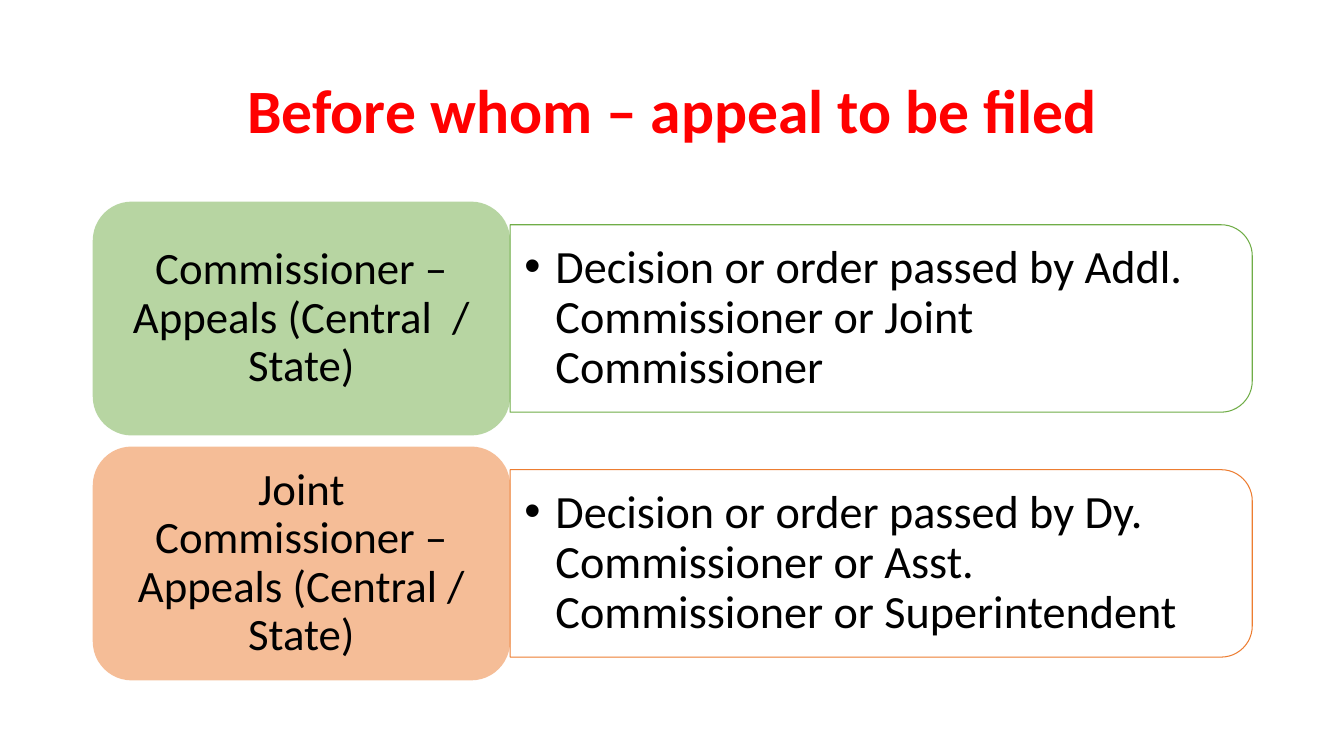
import pptx
import pptx.util
import pptx.dml.color
import pptx.enum.shapes
import pptx.enum.text
import pptx.oxml
import pptx.oxml.ns
from dataclasses import dataclass

Inches = pptx.util.Inches
Pt = pptx.util.Pt
Shape = pptx.enum.shapes.MSO_SHAPE
Align = pptx.enum.text.PP_ALIGN


@dataclass(frozen=True)
class Theme:
    font: str = "Calibri"
    title_color: str = "FF0000"
    text_color: str = "000000"
    central: str = "70AD47"
    joint: str = "ED7D31"
    title_size: int = 44
    authority_size: int = 32
    decision_size: int = 33
    outline: float = 0.75
    opacity: int = 50


def rgb(value):
    return pptx.dml.color.RGBColor.from_string(value)


def drawing_element(tag, **attributes):
    element = pptx.oxml.parse_xml(f"<a:{tag} {pptx.oxml.ns.nsdecls('a')}/>")
    for name, value in attributes.items():
        element.set(name, str(value))
    return element


class AppealSlide:
    def __init__(self, presentation, theme):
        self.theme = theme
        self.slide = presentation.slides.add_slide(presentation.slide_layouts[5])

    def set_text(self, holder, text, size, color, align, inset_x, inset_y, bold=False):
        frame = holder.text_frame
        frame.word_wrap = True
        frame.auto_size = pptx.enum.text.MSO_AUTO_SIZE.NONE
        frame.vertical_anchor = pptx.enum.text.MSO_ANCHOR.MIDDLE
        frame.margin_left = frame.margin_right = Inches(inset_x)
        frame.margin_top = frame.margin_bottom = Inches(inset_y)
        paragraph = frame.paragraphs[0]
        paragraph.text = text
        paragraph.alignment = align
        paragraph.line_spacing = 0.9
        paragraph.font.name = self.theme.font
        paragraph.font.size = Pt(size)
        paragraph.font.bold = bold
        paragraph.font.color.rgb = rgb(color)
        return paragraph

    def title(self, text, left, top, width, height):
        heading = self.slide.shapes.title
        heading.left, heading.top = Inches(left), Inches(top)
        heading.width, heading.height = Inches(width), Inches(height)
        self.set_text(heading, text, self.theme.title_size, self.theme.title_color,
                      Align.CENTER, 0.1, 0.05, bold=True)

    def authority(self, text, color, left, top, width, height):
        card = self.slide.shapes.add_shape(
            Shape.ROUNDED_RECTANGLE, Inches(left), Inches(top), Inches(width), Inches(height))
        card.shadow.inherit = False
        card.line.fill.background()
        card.fill.solid()
        card.fill.fore_color.rgb = rgb(color)
        tint = card._element.spPr.find(".//" + pptx.oxml.ns.qn("a:srgbClr"))
        tint.append(drawing_element("alpha", val=self.theme.opacity * 1000))
        self.set_text(card, text, self.theme.authority_size, self.theme.text_color,
                      Align.CENTER, 0.24, 0.18)

    def decision(self, text, color, left, top, width, height):
        shift = (width - height) / 2
        panel = self.slide.shapes.add_shape(
            Shape.ROUND_2_SAME_RECTANGLE, Inches(left + shift), Inches(top - shift),
            Inches(height), Inches(width))
        panel.rotation = 90
        panel.shadow.inherit = False
        panel.fill.background()
        panel.line.color.rgb = rgb(color)
        panel.line.width = Pt(self.theme.outline)

        order = self.slide.shapes.add_textbox(
            Inches(left), Inches(top + 0.09), Inches(width - 0.09), Inches(height - 0.18))
        paragraph = self.set_text(order, text, self.theme.decision_size,
                                  self.theme.text_color, Align.LEFT, 0.14, 0.07)
        paragraph.level = 1
        properties = paragraph._p.get_or_add_pPr()
        properties.set("marL", str(Inches(0.31)))
        properties.set("indent", str(-Inches(0.31)))
        bullet_font = drawing_element("buFont", typeface="Arial")
        bullet = drawing_element("buChar", char="•")
        spacing = properties.find(pptx.oxml.ns.qn("a:lnSpc"))
        spacing.addnext(bullet_font)
        bullet_font.addnext(bullet)


def main():
    presentation = pptx.Presentation()
    presentation.slide_width = Inches(13.33)
    presentation.slide_height = Inches(7.5)
    theme = Theme()
    page = AppealSlide(presentation, theme)
    page.title("Before whom – appeal to be filed", 0.92, 0.4, 11.5, 1.45)

    appeals = [
        ("Commissioner – Appeals (Central  / State)",
         "Decision or order passed by Addl. Commissioner or Joint Commissioner",
         theme.central),
        ("Joint Commissioner – Appeals (Central / State)",
         "Decision or order passed by Dy. Commissioner or Asst. Commissioner or Superintendent",
         theme.joint),
    ]
    left, first_top, row_pitch = 0.92, 2, 2.43
    card_width, card_height = 4.14, 2.32
    panel_width, panel_height = 7.36, 1.86
    for row, (authority, decision, color) in enumerate(appeals):
        top = first_top + row * row_pitch
        panel_top = top + (card_height - panel_height) / 2
        page.decision(decision, color, left + card_width, panel_top, panel_width, panel_height)
        page.authority(authority, color, left, top, card_width, card_height)

    presentation.save("out.pptx")


if __name__ == "__main__":
    main()
